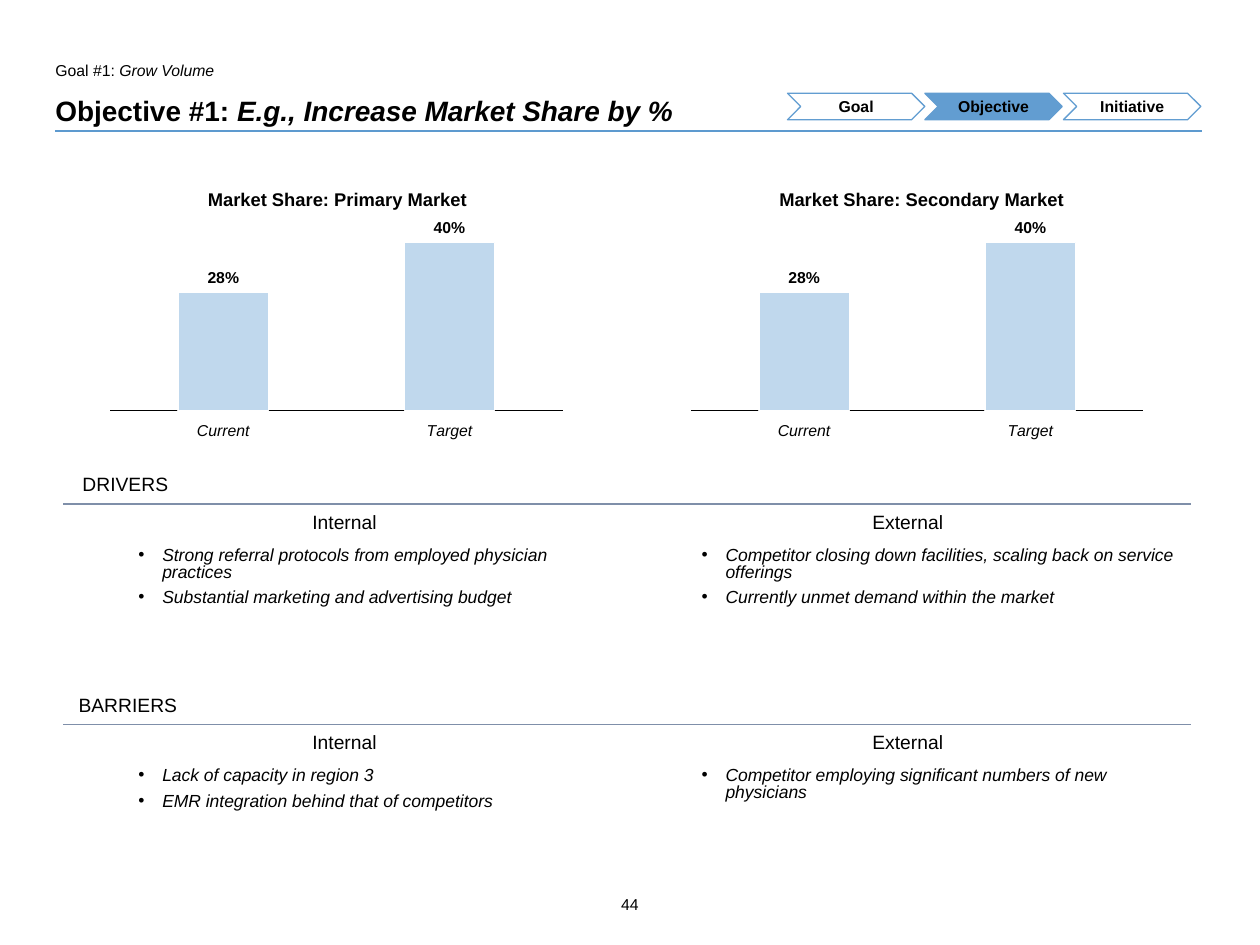
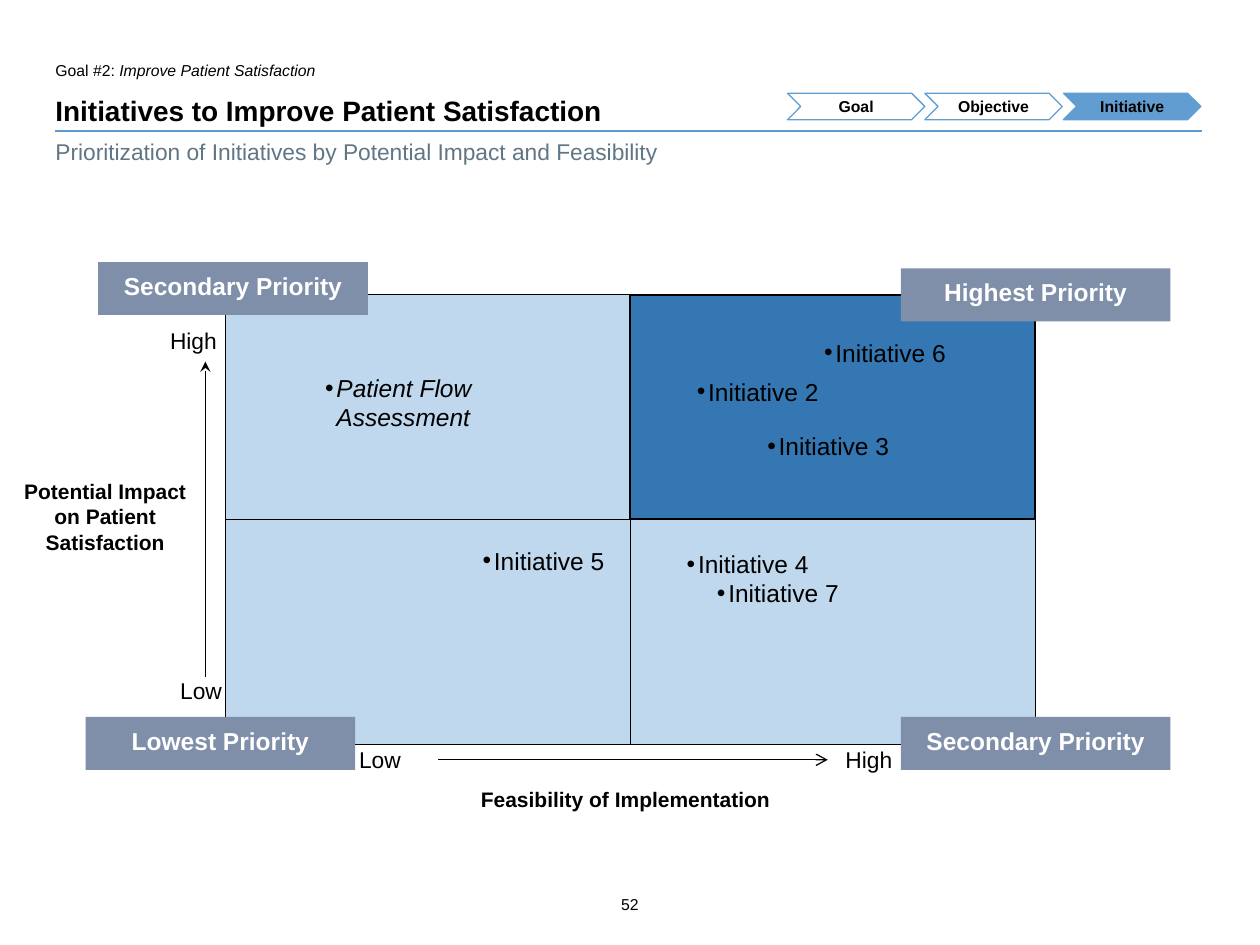
"""Builds two strategic planning slides: an objective page and an initiative priority matrix."""
from lxml.etree import SubElement
from pptx import Presentation
from pptx.chart.data import CategoryChartData
from pptx.dml.color import RGBColor
from pptx.enum.chart import XL_CHART_TYPE as ChartType, XL_LABEL_POSITION as LabelPosition
from pptx.enum.chart import XL_TICK_LABEL_POSITION as TickLabels, XL_TICK_MARK as TickMark
from pptx.enum.shapes import MSO_CONNECTOR as Connector, MSO_SHAPE as Shape
from pptx.enum.text import MSO_ANCHOR as Anchor, PP_ALIGN as Align
from pptx.oxml import parse_xml
from pptx.oxml.ns import nsdecls, qn
from pptx.util import Pt

PX = 9144
FONT = "Arial"
BLACK = RGBColor(0x00, 0x00, 0x00)
WHITE = RGBColor(0xFF, 0xFF, 0xFF)
RULE_BLUE = RGBColor(0x5D, 0x9A, 0xCF)
STEP_BLUE = RGBColor(0x62, 0x9D, 0xD1)
PALE_BLUE = RGBColor(0xC0, 0xD8, 0xED)
DEEP_BLUE = RGBColor(0x34, 0x77, 0xB2)
SLATE = RGBColor(0x7F, 0x8F, 0xA9)
SUBTITLE_GREY = RGBColor(0x61, 0x76, 0x85)


def add_box(slide, box, paragraphs=(), size=9, color=BLACK, bold=False, italic=False,
            align=Align.LEFT, anchor=Anchor.TOP, insets=(14, 7), bullet=None, tight=False,
            preset=None, fill=None, line=None):
    left, top, width, height = [value * PX for value in box]
    if preset is None:
        shape = slide.shapes.add_textbox(left, top, width, height)
    else:
        shape = slide.shapes.add_shape(preset, left, top, width, height)
        shape.shadow.inherit = False
        if fill is None:
            shape.fill.background()
        else:
            shape.fill.solid()
            shape.fill.fore_color.rgb = fill
        if line is None:
            shape.line.fill.background()
        else:
            shape.line.color.rgb = line
            shape.line.width = Pt(0.75)
    frame = shape.text_frame
    frame.word_wrap = True
    frame.vertical_anchor = anchor
    frame.margin_left = frame.margin_right = insets[0] * PX
    frame.margin_top = frame.margin_bottom = insets[1] * PX
    for index, runs in enumerate(paragraphs):
        paragraph = frame.add_paragraph() if index else frame.paragraphs[0]
        paragraph.alignment = align
        if tight:
            paragraph.line_spacing = 0.8
            paragraph.space_before = Pt(5)
        if bullet:
            properties = paragraph._p.get_or_add_pPr()
            properties.set("marL", str(bullet[0] * PX))
            properties.set("indent", str(-bullet[1] * PX))
            SubElement(properties, qn("a:buFont"), typeface=FONT)
            SubElement(properties, qn("a:buChar"), char="•")
        for text, slanted in runs:
            run = paragraph.add_run()
            run.text = text
            run.font.name = FONT
            run.font.size = Pt(size)
            run.font.bold = bold
            run.font.italic = italic or slanted
            run.font.color.rgb = color


def add_line(slide, ends, color, width, arrow=None):
    connector = slide.shapes.add_connector(Connector.STRAIGHT, *[value * PX for value in ends])
    connector.line.color.rgb = color
    connector.line.width = Pt(width)
    properties = connector._element.spPr
    if arrow:
        SubElement(properties.find(qn("a:ln")), qn("a:tailEnd"), type=arrow)
    SubElement(properties, qn("a:effectLst"))


presentation = Presentation()
presentation.slide_width = 1000 * PX
presentation.slide_height = 750 * PX

pages = [
    ("44", [("Goal #1: ", False), ("Grow Volume", True)],
     [("Objective #1: ", False), ("E.g., Increase Market Share by %", True)], "Objective"),
    ("52", [("Goal #2: ", False), ("Improve Patient Satisfaction", True)],
     [("Initiatives to Improve Patient Satisfaction", False)], "Initiative"),
]
slides = []
for number, goal, title, active_step in pages:
    slide = presentation.slides.add_slide(presentation.slide_layouts[6])
    slides.append(slide)
    add_line(slide, (44, 104, 954, 104), RULE_BLUE, 0.75)
    add_box(slide, (466, 706, 68, 26), [[(number, False)]], align=Align.CENTER, insets=(4, 4))
    add_box(slide, (44, 44, 289, 20), [goal], insets=(0, 4))
    add_box(slide, (44, 74, 909, 27), [title], 16, bold=True, anchor=Anchor.BOTTOM, insets=(0, 0))
    for index, step in enumerate(["Goal", "Objective", "Initiative"]):
        add_box(slide, (625 + index * 219 // 2, 74, 109, 21), [[(step, False)]], bold=True,
                align=Align.CENTER, anchor=Anchor.MIDDLE, preset=Shape.CHEVRON,
                fill=STEP_BLUE if step == active_step else None, line=STEP_BLUE)
objective_slide, matrix_slide = slides

for left, market, title_x in [(80, "Primary", 0.22), (541, "Secondary", 0.2)]:
    name = f"Market Share: {market} Market"
    data = CategoryChartData(number_format="0%")
    data.categories = ["Current", "Target"]
    data.add_series(name, (0.28, 0.4))
    chart = objective_slide.shapes.add_chart(
        ChartType.COLUMN_CLUSTERED, left * PX, 135 * PX, 374 * PX, 215 * PX, data).chart
    chart.font.name = FONT
    chart.font.size = Pt(9)
    chart.font.color.rgb = BLACK
    chart.has_legend = False
    chart.has_title = True
    run = chart.chart_title.text_frame.paragraphs[0].add_run()
    run.text = name
    run.font.name = FONT
    run.font.size = Pt(10.5)
    run.font.bold = True
    run.font.color.rgb = BLACK
    chart.value_axis.visible = False
    chart.value_axis.has_major_gridlines = False
    chart.value_axis.minimum_scale = 0
    chart.value_axis.maximum_scale = 0.45
    axis = chart.category_axis
    axis.major_tick_mark = TickMark.NONE
    axis.tick_label_position = TickLabels.LOW
    axis.tick_labels.font.italic = True
    axis.tick_labels.font.size = Pt(9)
    axis.format.line.color.rgb = BLACK
    axis.format.line.width = Pt(0.75)
    plot = chart.plots[0]
    plot.gap_width = 150
    plot.overlap = -25
    plot.vary_by_categories = False
    plot.has_data_labels = True
    labels = plot.data_labels
    labels.show_value = True
    labels.number_format = "0%"
    labels.number_format_is_linked = False
    labels.position = LabelPosition.OUTSIDE_END
    labels.font.bold = True
    labels.font.size = Pt(9)
    bars = plot.series[0].format
    bars.fill.solid()
    bars.fill.fore_color.rgb = PALE_BLUE
    bars.line.color.rgb = WHITE
    bars.line.width = Pt(0.75)
    chart_xml = chart._chartSpace.chart
    for parent, target, sizes in [
        (chart_xml.find(qn("c:title")), "", [("x", title_x), ("y", 0.05)]),
        (chart_xml.plotArea, '<c:layoutTarget val="inner"/>',
         [("x", 0.02), ("y", 0.19), ("w", 0.96), ("h", 0.7)]),
    ]:
        for layout in parent.findall(qn("c:layout")):
            parent.remove(layout)
        modes = "".join(f'<c:{key}Mode val="edge"/>' for key, value in sizes if key in "xy")
        values = "".join(f'<c:{key} val="{value}"/>' for key, value in sizes)
        layout = parse_xml(f'<c:layout {nsdecls("c")}><c:manualLayout>{target}{modes}{values}'
                           '</c:manualLayout></c:layout>')
        parent.insert(0 if target else 1, layout)

factors = [
    ("DRIVERS", 42, 400,
     ["Strong referral protocols from employed physician practices",
      "Substantial marketing and advertising budget"],
     ["Competitor closing down facilities, scaling back on service offerings",
      "Currently unmet demand within the market"]),
    ("BARRIERS", 44, 575,
     ["Lack of capacity in region 3", "EMR integration behind that of competitors"],
     ["Competitor employing significant numbers of new physicians"]),
]
for heading, heading_left, top, internal, external in factors:
    add_box(objective_slide, (heading_left, top - 30, 115, 29), [[(heading, False)]], 11,
            align=Align.CENTER, insets=(5, 5))
    add_line(objective_slide, (50, top, 945, top), SLATE, 1)
    for left, side, points in [(50, "Internal", internal), (497, "External", external)]:
        add_box(objective_slide, (left, top, 447, 29), [[(side, False)]], 11,
                align=Align.CENTER, insets=(5, 5))
        add_box(objective_slide, (left, top + 30, 447, 59), [[(point, True)] for point in points],
                10, insets=(10, 5), bullet=(69, 19), tight=True)

add_box(matrix_slide, (44, 105, 909, 30),
        [[("Prioritization of Initiatives by Potential Impact and Feasibility", False)]],
        13, SUBTITLE_GREY, insets=(0, 4))
add_box(matrix_slide, (179, 234, 643, 357), preset=Shape.RECTANGLE, fill=PALE_BLUE, line=BLACK)
add_box(matrix_slide, (500, 234, 321, 178), preset=Shape.RECTANGLE, fill=DEEP_BLUE, line=BLACK)
add_line(matrix_slide, (500, 234, 500, 591), BLACK, 0.5)
add_line(matrix_slide, (179, 412, 821, 412), BLACK, 0.5)

for left, top, priority in [(78, 208, "Secondary"), (715, 213, "Highest"),
                            (68, 569, "Lowest"), (715, 569, "Secondary")]:
    add_box(matrix_slide, (left, top, 214, 42), [[(f"{priority} Priority", False)]], 14, WHITE,
            bold=True, align=Align.CENTER, insets=(10, 7), preset=Shape.RECTANGLE, fill=SLATE)

add_box(matrix_slide, (244, 289, 206, 62), [[("Patient Flow Assessment", True)]], 14, bullet=(9, 9))
initiatives = [(539, 292), (595, 335), (531, 429), (369, 426), (640, 261), (555, 452)]
for number, (left, top) in enumerate(initiatives, start=2):
    add_box(matrix_slide, (left, top, 177, 38), [[(f"Initiative {number}", False)]], 14,
            bullet=(9, 9))

for left, top, level in [(129, 530, "Low"), (271, 585, "Low"), (121, 252, "High"), (657, 585, "High")]:
    add_box(matrix_slide, (left, top, 77, 36), [[(level, False)]], 13)
for box, caption in [((0, 373, 167, 75), "Potential Impact on Patient Satisfaction"),
                     ((310, 617, 373, 35), "Feasibility of Implementation")]:
    add_box(matrix_slide, box, [[(caption, False)]], 12, bold=True, align=Align.CENTER)
add_line(matrix_slide, (163, 537, 163, 287), BLACK, 0.75, "stealth")
add_line(matrix_slide, (348, 603, 657, 603), BLACK, 0.75, "arrow")

presentation.save("out.pptx")
